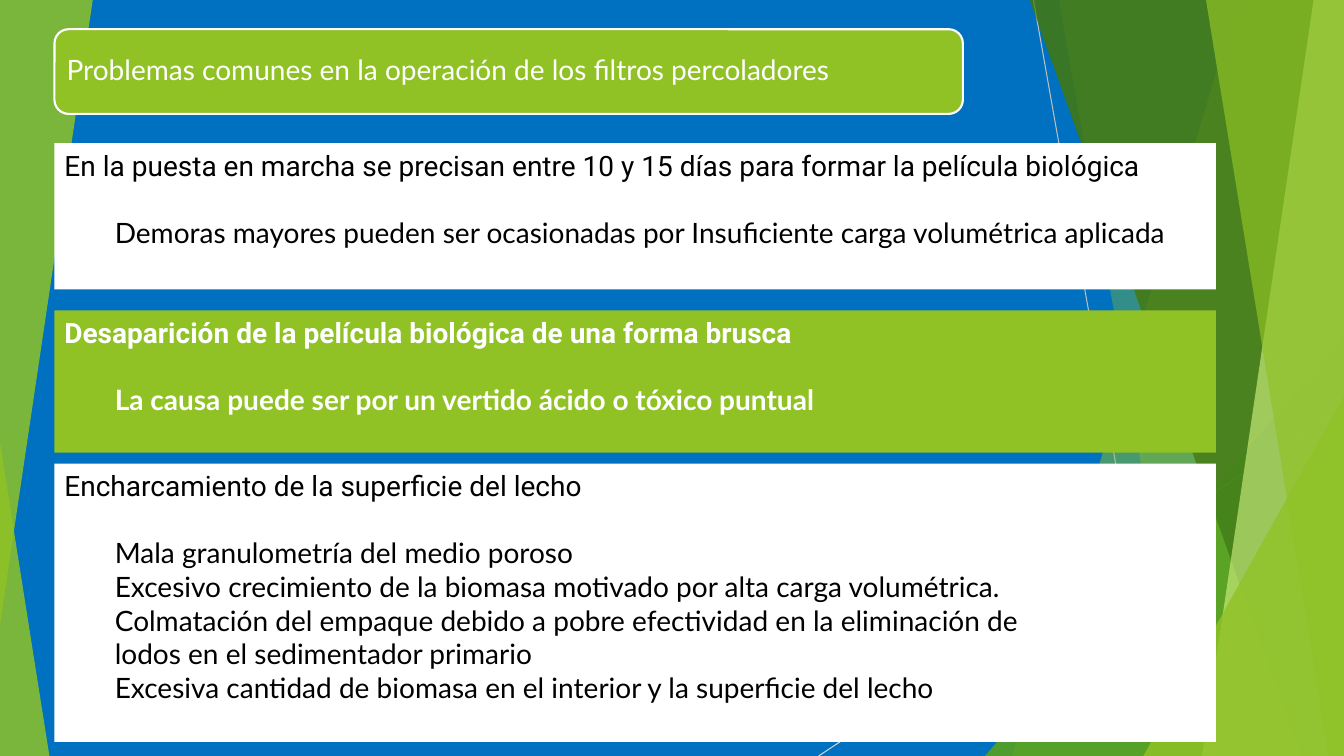
from lxml import etree
from pptx import Presentation
from pptx import util as u
from pptx.dml.color import RGBColor
from pptx.enum import shapes, text
from pptx.oxml import ns

WHITE, BLACK, GREEN = "FFFFFF", "000000", "90C226"
RIGHT, TOP, BOTTOM = 13.33, -0.01, 7.5


def colour(target, hex_code, opacity=100):
    target.rgb = RGBColor.from_string(hex_code)
    if opacity < 100:
        node = target._xFill.find(ns.qn("a:srgbClr"))
        etree.SubElement(node, ns.qn("a:alpha"), val=str(opacity * 1000))


def paint(shape, hex_code, opacity=100):
    shape.shadow.inherit = False
    shape.fill.solid()
    colour(shape.fill.fore_color, hex_code, opacity)
    shape.line.fill.background()


deck = Presentation()
deck.slide_width, deck.slide_height = u.Inches(RIGHT), u.Inches(BOTTOM)
page = deck.slides.add_slide(deck.slide_layouts[6])
page.background.fill.solid()
colour(page.background.fill.fore_color, "0070C0")

facets = [
    ("band", 12.28, 10.04, GREEN, 30),
    ("band", 10.5, 11.83, GREEN, 20),
    ("corner", 9.77, 3.33, "54A021", 72),
    ("band", 10.21, 12.91, "3F7819", 70),
    ("band", 13.03, 11.92, "C0E474", 70),
    ("band", 11.96, 13.18, GREEN, 65),
    ("corner", 11.34, 3.93, GREEN, 80),
]
left_triangles = [(4.39, 0.49, 3.11, 0, 0), (0, 0.92, 6.2, 1, 180)]
thin_lines = [(10.25, 0, 11.58, 7.5, "BFBFBF"), (13.33, 4.03, 8.12, 7.5, "D9D9D9")]

for layer, (top, width, height, apex, turn) in enumerate(left_triangles):
    if layer == 1:
        for x1, y1, x2, y2, shade in thin_lines:
            line = page.shapes.add_connector(
                shapes.MSO_CONNECTOR.STRAIGHT, u.Inches(x1), u.Inches(y1), u.Inches(x2), u.Inches(y2))
            colour(line.line.color, shade)
            line.line.width = u.Pt(0.75)
            etree.SubElement(line._element.spPr, ns.qn("a:effectLst"))

    for kind, first, second, shade, opacity in facets:
        if kind == "band":
            outline = [(first, TOP), (RIGHT, TOP), (RIGHT, BOTTOM), (second, BOTTOM)]
            points = [(u.Inches(x), u.Inches(y)) for x, y in outline]
            builder = page.shapes.build_freeform(*points[0])
            builder.add_line_segments(points[1:], close=True)
            facet = builder.convert_to_shape()
        else:
            facet = page.shapes.add_shape(
                shapes.MSO_SHAPE.ISOSCELES_TRIANGLE, u.Inches(first), u.Inches(second),
                u.Inches(RIGHT - first), u.Inches(BOTTOM - second))
            facet.adjustments[0] = 1
        paint(facet, shade, opacity)

    triangle = page.shapes.add_shape(
        shapes.MSO_SHAPE.ISOSCELES_TRIANGLE, 0, u.Inches(top), u.Inches(width), u.Inches(height))
    triangle.adjustments[0] = apex
    triangle.rotation = turn
    paint(triangle, GREEN, 85)

title = page.shapes.add_shape(
    shapes.MSO_SHAPE.ROUNDED_RECTANGLE, u.Inches(0.54), u.Inches(0.29), u.Inches(9.01), u.Inches(0.84))
paint(title, GREEN)
colour(title.line.color, WHITE)
title.line.width = u.Pt(1.5)
frame = title.text_frame
frame.text = "Problemas comunes en la operación de los filtros percoladores"
frame.word_wrap = True
frame.vertical_anchor = text.MSO_ANCHOR.MIDDLE
frame.margin_left = frame.margin_right = u.Inches(0.08)
para = frame.paragraphs[0]
para.alignment = text.PP_ALIGN.LEFT
para.line_spacing = 0.9
span = para.runs[0]
span.font.name, span.font.size = "Lato", u.Pt(20)
colour(span.font.color, WHITE)

panels = [
    (1.42, 1.45, WHITE, BLACK, False, [
        "En la puesta en marcha se precisan entre 10 y 15 días para formar la película biológica",
        "Demoras mayores pueden ser ocasionadas por Insuficiente carga volumétrica aplicada",
    ]),
    (3.08, 1.41, GREEN, WHITE, True, [
        "Desaparición de la película biológica de una forma brusca",
        "La causa puede ser por un vertido ácido o tóxico puntual",
    ]),
    (4.6, 2.76, WHITE, BLACK, False, [
        "Encharcamiento de la superficie del lecho",
        "Mala granulometría del medio poroso",
        "Excesivo crecimiento de la biomasa motivado por alta carga volumétrica.",
        "Colmatación del empaque debido a pobre efectividad en la eliminación de",
        "lodos en el sedimentador primario",
        "Excesiva cantidad de biomasa en el interior y la superficie del lecho",
    ]),
]
for top, height, fill, ink, bold, lines in panels:
    panel = page.shapes.add_shape(
        shapes.MSO_SHAPE.RECTANGLE, u.Inches(0.54), u.Inches(top), u.Inches(11.52), u.Inches(height))
    paint(panel, fill)
    frame = panel.text_frame
    frame.text = "\n".join(lines)
    frame.word_wrap = True
    frame.vertical_anchor = text.MSO_ANCHOR.TOP
    for number, para in enumerate(frame.paragraphs):
        para.alignment = text.PP_ALIGN.LEFT
        if number > 0:
            para._p.get_or_add_pPr().set("marL", str(u.Inches(0.5)))
        if number == 1:
            para.space_before = u.Pt(24)
        span = para.runs[0]
        span.font.name = "Lato" if number else "Roboto"
        span.font.size, span.font.bold = u.Pt(20), bold
        colour(span.font.color, ink)

deck.save("out.pptx")
